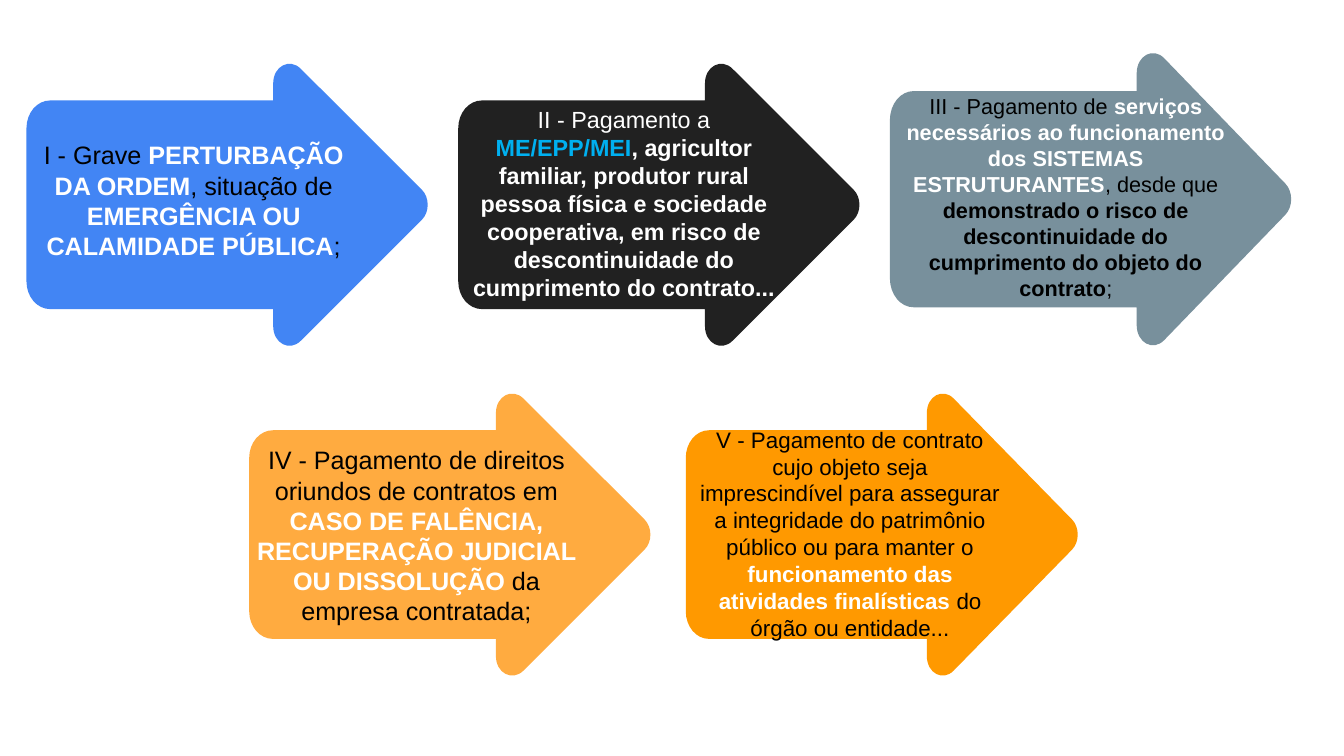
from pptx import Presentation
from pptx.dml.color import RGBColor
from pptx.enum.text import MSO_ANCHOR, PP_ALIGN
from pptx.oxml.ns import qn
from pptx.oxml.xmlchemy import OxmlElement
from pptx.util import Pt

TOP = MSO_ANCHOR.TOP
CENTER = PP_ALIGN.CENTER
FONT = "Arial"
BLACK, WHITE, CYAN = "000000", "FFFFFF", "00B0F0"

# Rounded corners of the upper half of an arrow, as cubic curves
WIDE, HIGH = 216, 157.4
NOSE = [(211.8, 86.8), (216, 82.6), (216, 74.8), (211.8, 70.6)]
HEAD = [(146.9, 5.8), (141.1, 0), (132.2, 4.3), (132.2, 13.7)]
NECK = [(132.2, 22.8)]
FOOT = [(12.8, 22.8), (5.6, 22.8), (0, 29.5), (0, 37.7)]

# Each item: arrow box, fill, text box, text size, runs (text, colour, bold)
ITEMS = [
    ((14.2, 31, 216, 157.4), "4285F4", (14.1, 71.3, 179.3, 72.7), 13.5, [
        ("I - Grave ", BLACK, False),
        ("PERTURBAÇÃO DA ORDEM", WHITE, True),
        (", situação de ", BLACK, False),
        ("EMERGÊNCIA OU CALAMIDADE PÚBLICA", WHITE, True),
        (";", BLACK, False)]),
    ((245.5, 31, 216, 157.4), "212121", (241.7, 52.6, 185, 113), 12.5, [
        ("II - Pagamento a ", WHITE, False),
        ("ME/EPP/MEI", CYAN, True),
        (", agricultor familiar, produtor rural pessoa física e sociedade "
         "cooperativa, em risco de descontinuidade do cumprimento do "
         "contrato...", WHITE, True)]),
    ((476.8, 25.2, 216, 163.1), "78909C", (474.5, 46.1, 193, 120.2), 11.6, [
        ("III - Pagamento de ", BLACK, False),
        ("serviços necessários ao funcionamento dos SISTEMAS "
         "ESTRUTURANTES", WHITE, True),
        (", desde que ", BLACK, False),
        ("demonstrado o risco de descontinuidade do cumprimento do objeto "
         "do contrato", BLACK, True),
        (";", BLACK, False)]),
    ((133.5, 207.7, 216, 157.4), "FFAB40", (127.4, 234.7, 191.5, 105.1), 13.5, [
        ("IV - Pagamento de direitos oriundos de contratos em ", BLACK, False),
        ("CASO DE FALÊNCIA, RECUPERAÇÃO JUDICIAL OU DISSOLUÇÃO ", WHITE, True),
        ("da empresa contratada;", BLACK, False)]),
    ((367.4, 207.7, 211, 157.4), "FF9900", (367.2, 224.6, 176.4, 123.8), 12, [
        ("V - Pagamento de contrato cujo objeto seja imprescindível para "
         "assegurar a integridade do patrimônio público ou para manter o ",
         BLACK, False),
        ("funcionamento das atividades finalísticas ", WHITE, True),
        ("do órgão ou entidade...", BLACK, False)]),
]


def color(code):
    return RGBColor.from_string(code)


def flip(part):
    """Mirror a part of the outline into the lower half."""
    return [(x, HIGH - y) for x, y in reversed(part)]


def bend(arrow, parts):
    """Turn the last three lines of each corner into one curve."""
    lines = iter(list(arrow._element.iter(qn("a:lnTo"))))
    for part in parts:
        next(lines)
        if len(part) == 1:
            continue
        curve = OxmlElement("a:cubicBezTo")
        for index in range(3):
            line = next(lines)
            if index == 0:
                line.addprevious(curve)
            curve.append(line[0])
            line.getparent().remove(line)


def add_arrow(slide, box, fill):
    left, top, width, height = box
    upper = [HEAD, NECK, FOOT]
    parts = upper + [flip(part) for part in reversed(upper)] + [NOSE]
    dots = [(Pt(left + x * width / WIDE), Pt(top + y * height / HIGH))
            for part in [NOSE[-1:]] + parts for x, y in part]
    path = slide.shapes.build_freeform(*dots[0])
    path.add_line_segments(dots[1:], close=True)
    arrow = path.convert_to_shape()
    bend(arrow, parts)
    arrow.shadow.inherit = False
    arrow.fill.solid()
    arrow.fill.fore_color.rgb = color(fill)
    arrow.line.fill.background()


def add_text(slide, box, size, runs):
    frame = slide.shapes.add_textbox(*map(Pt, box)).text_frame
    frame.word_wrap = True
    frame.vertical_anchor = TOP
    para = frame.paragraphs[0]
    para.alignment = CENTER
    for text, ink, bold in runs:
        run = para.add_run()
        run.text = text
        run.font.name = FONT
        run.font.size = Pt(size)
        run.font.bold = bold
        run.font.color.rgb = color(ink)


def main():
    deck = Presentation()
    deck.slide_width, deck.slide_height = Pt(720), Pt(405)
    slide = deck.slides.add_slide(deck.slide_layouts[6])
    for box, fill, *_ in ITEMS:
        add_arrow(slide, box, fill)
    for _, _, box, size, runs in ITEMS:
        add_text(slide, box, size, runs)
    deck.save("out.pptx")


if __name__ == "__main__":
    main()
